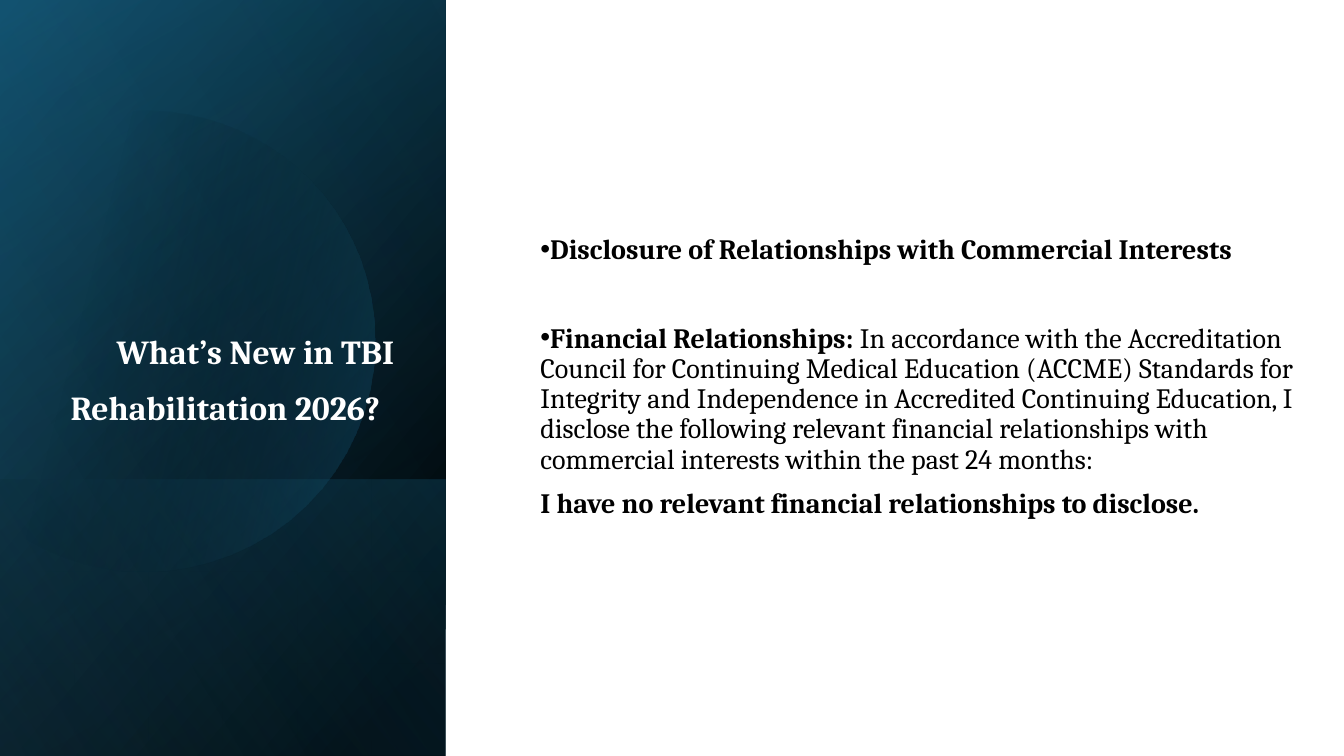
from lxml import etree
from pptx import Presentation
from pptx.dml.color import RGBColor
from pptx.enum.shapes import MSO_SHAPE as Preset
from pptx.enum.text import MSO_ANCHOR as Anchor, MSO_AUTO_SIZE as AutoSize, PP_ALIGN as Align
from pptx.oxml.ns import qn
from pptx.util import Inches, Pt

BLACK = RGBColor(0x00, 0x00, 0x00)
WHITE = RGBColor(0xFF, 0xFF, 0xFF)
NAVY = RGBColor(0x10, 0x48, 0x62)
TEAL = RGBColor(0x15, 0x60, 0x82)
SKY = RGBColor(0x46, 0xB1, 0xE1)

SLIDE_WIDTH, SLIDE_HEIGHT = 13.33, 7.5
PANEL_WIDTH = 4.42
LOWER_TOP = 4.76

# Disc outline: start point, then groups of two control points and an end point
DISC_START = (1.49, 1.1)
DISC_RIGHT = [
    [(2.46, 1.12), (3.35, 1.77), (3.63, 2.75)],
    [(3.98, 3.97), (3.28, 5.23), (2.07, 5.58)],
    [(1.31, 5.8), (0.53, 5.61), (-0.03, 5.14)],
]
DISC_CUT = [(-0.15, 5.03), (-0.15, 1.75), (0, 1.61)]
DISC_TOP = [
    [(0.23, 1.42), (0.5, 1.28), (0.8, 1.19)],
    [(1.03, 1.13), (1.26, 1.1), (1.49, 1.1)],
]

DISCLOSURE = [
    {"bullet": True, "before": 0, "runs": [
        ("Disclosure of Relationships with Commercial Interests", True)]},
    {"bullet": True, "before": 41.5, "runs": [
        ("Financial Relationships: ", True),
        ("In accordance with the Accreditation Council for Continuing Medical Education "
         "(ACCME) Standards for Integrity and Independence in Accredited Continuing "
         "Education, I disclose the following relevant financial relationships with "
         "commercial interests within the past 24 months:", False)]},
    {"bullet": False, "before": 10, "runs": [
        ("I have no relevant financial relationships to disclose.", True)]},
]


def set_all(target, values):
    for name, value in values.items():
        setattr(target, name, value)


def plain(shape):
    shape.shadow.inherit = False
    shape.line.fill.background()


def fade(shape, stops, angle):
    """Fill with a linear gradient; each stop is (percent, colour, opacity percent)."""
    shape.fill.gradient()
    gradient = shape._element.spPr.find(qn("a:gradFill"))
    for child in list(gradient):
        gradient.remove(child)
    stop_list = etree.SubElement(gradient, qn("a:gsLst"))
    for percent, color, opacity in stops:
        stop = etree.SubElement(stop_list, qn("a:gs"), pos=str(percent * 1000))
        tint = etree.SubElement(stop, qn("a:srgbClr"), val=str(color))
        etree.SubElement(tint, qn("a:alpha"), val=str(opacity * 1000))
    etree.SubElement(gradient, qn("a:lin"), ang=str(angle * 60000), scaled="0")
    gradient.set("rotWithShape", "1")


def add_layer(slide, box, stops, angle):
    """Cover the box with a mirrored rectangle turned by a quarter."""
    left, top, width, height = box
    shift = (width - height) / 2
    layer = slide.shapes.add_shape(Preset.RECTANGLE, Inches(left + shift),
                                   Inches(top - shift), Inches(height), Inches(width))
    layer.rotation = 90
    layer._element.spPr.find(qn("a:xfrm")).set("flipH", "1")
    plain(layer)
    fade(layer, stops, angle)


def curve_points(start, curves, steps=16):
    points = []
    for first, second, end in curves:
        for step in range(1, steps + 1):
            t = step / steps
            u = 1 - t
            points.append(tuple(
                u**3 * a + 3 * u * u * t * b + 3 * u * t * t * c + t**3 * d
                for a, b, c, d in zip(start, first, second, end)))
        start = end
    return points


def add_disc(slide, left, top):
    points = (curve_points(DISC_START, DISC_RIGHT) + DISC_CUT
              + curve_points(DISC_CUT[-1], DISC_TOP))
    placed = [(Inches(left + x), Inches(top + y)) for x, y in points]
    builder = slide.shapes.build_freeform(*placed[-1])
    builder.add_line_segments(placed[:-1], close=True)
    disc = builder.convert_to_shape()
    plain(disc)
    fade(disc, [(29, BLACK, 0), (100, TEAL, 43)], 14)


def add_side_panel(slide, box):
    left, top, width, height = box
    lower = (left, top + LOWER_TOP, width, height - LOWER_TOP)
    add_layer(slide, box, [(8, BLACK, 100), (100, NAVY, 100)], 50)
    add_layer(slide, box, [(0, BLACK, 0), (99, TEAL, 46)], 30)
    add_layer(slide, lower, [(2, TEAL, 29), (100, BLACK, 30)], 130)
    add_disc(slide, left, top)
    add_layer(slide, box, [(0, BLACK, 0), (99, SKY, 11)], 120)


def place_text(slide, holder, box, anchor):
    """Move a placeholder to the box, in front of the other shapes."""
    slide.shapes._spTree.append(holder._element)
    set_all(holder, dict(zip(("left", "top", "width", "height"), map(Inches, box))))
    set_all(holder.text_frame, {"word_wrap": True, "auto_size": AutoSize.NONE,
                                "vertical_anchor": anchor})
    return holder.text_frame


def add_span(para, text, **font):
    span = para.add_run()
    span.text = text
    color = font.pop("color")
    set_all(span.font, font)
    span.font.color.rgb = color


def add_title(slide, box):
    para = place_text(slide, slide.shapes.title, box, Anchor.BOTTOM).paragraphs[0]
    set_all(para, {"alignment": Align.RIGHT, "line_spacing": 0.9})
    add_span(para, "What’s New in TBI Rehabilitation 2026?",
             name="Cambria", size=Pt(24), bold=True, color=WHITE)
    add_span(para, " ", name="Karla", size=Pt(40), bold=True, color=WHITE)


def set_bullet(para, shown):
    properties = para._p.get_or_add_pPr()
    properties.set("marL", "0")
    properties.set("indent", str(-Inches(0.25) if shown else 0))
    if shown:
        etree.SubElement(properties, qn("a:buFont"), typeface="Arial")
        etree.SubElement(properties, qn("a:buChar"), char="•")
    else:
        etree.SubElement(properties, qn("a:buNone"))


def add_disclosure(slide, box):
    frame = place_text(slide, slide.placeholders[1], box, Anchor.MIDDLE)
    for index, item in enumerate(DISCLOSURE):
        para = frame.add_paragraph() if index else frame.paragraphs[0]
        set_bullet(para, item["bullet"])
        set_all(para, {"alignment": Align.LEFT, "line_spacing": 0.9,
                       "space_before": Pt(item["before"]), "space_after": Pt(0)})
        for text, bold in item["runs"]:
            add_span(para, text, name="Cambria", size=Pt(20), bold=bold, color=BLACK)


def add_backdrop(slide, box):
    backdrop = slide.shapes.add_shape(Preset.RECTANGLE, *map(Inches, box))
    plain(backdrop)
    backdrop.fill.solid()
    backdrop.fill.fore_color.rgb = WHITE


def main():
    deck = Presentation()
    set_all(deck, {"slide_width": Inches(SLIDE_WIDTH), "slide_height": Inches(SLIDE_HEIGHT)})
    slide = deck.slides.add_slide(deck.slide_layouts[0])
    add_backdrop(slide, (0, 0, SLIDE_WIDTH, SLIDE_HEIGHT))
    add_side_panel(slide, (0, 0, PANEL_WIDTH, SLIDE_HEIGHT))
    add_title(slide, (0.51, 0.64, 3.5, 3.7))
    add_disclosure(slide, (5.26, 0.71, 7.73, 6.07))
    deck.save("out.pptx")


if __name__ == "__main__":
    main()
